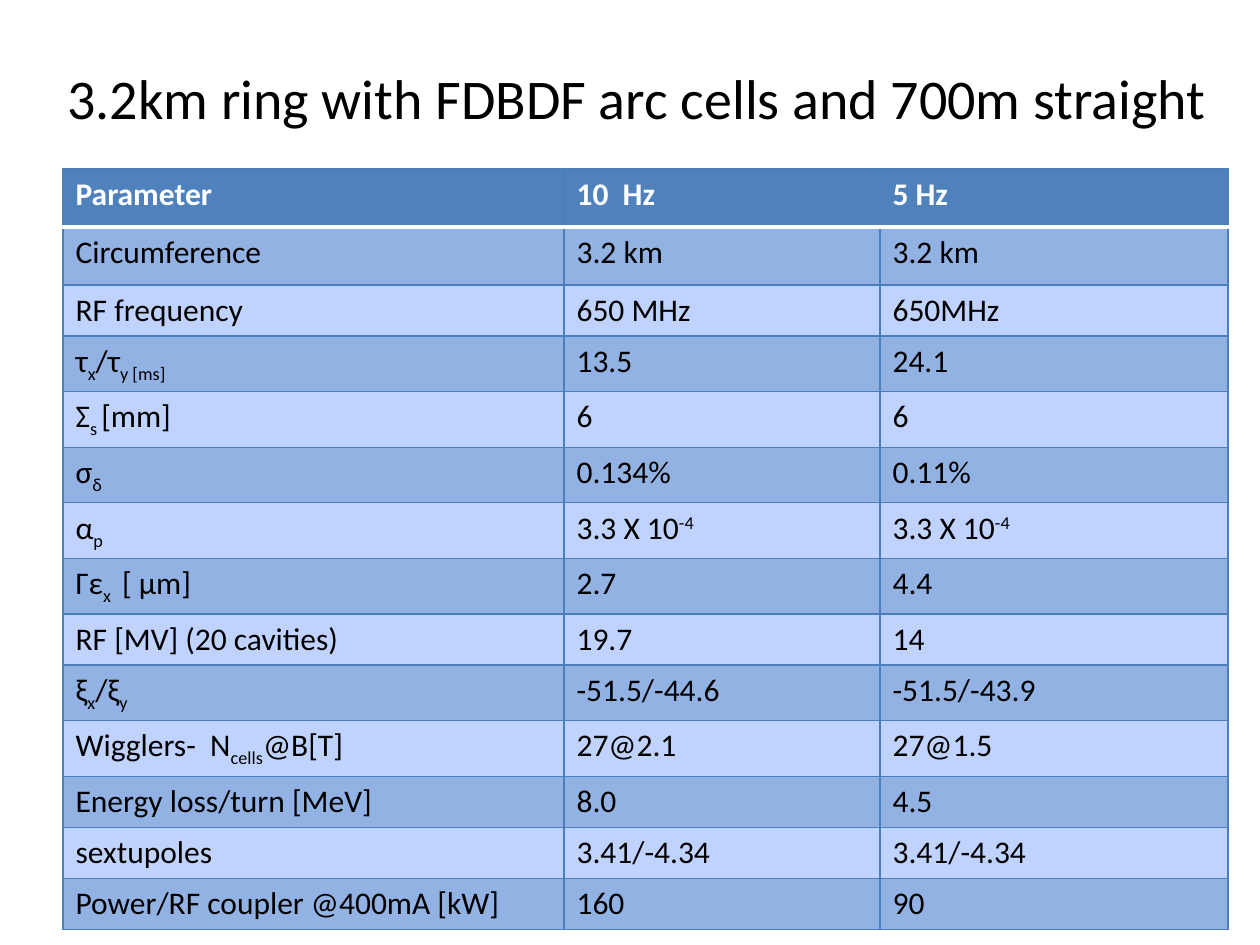
"""Build the slide of 3.2km ring parameters at 10 Hz and 5 Hz."""
from lxml import etree
from pptx import Presentation
from pptx import util as u
from pptx.dml.color import RGBColor
from pptx.enum import text as t
from pptx.oxml.ns import qn

PX = 914400 // 126
BLACK = RGBColor(0x00, 0x00, 0x00)
WHITE = RGBColor(0xFF, 0xFF, 0xFF)
HEADER = RGBColor(0x4F, 0x81, 0xBD)
BAND = RGBColor(0x93, 0xB2, 0xE4)
PALE = RGBColor(0xC0, 0xD3, 0xFF)
RULE = RGBColor(0x4B, 0x7E, 0xBC)

TITLE = " 3.2km ring with FDBDF arc cells and 700m straight"
SHIFTS = {"_": "-25000", "^": "30000"}
PARAMETERS = [
    ("Parameter", "10  Hz", "5 Hz"),
    ("Circumference", "3.2 km", "3.2 km"),
    ("RF frequency", "650 MHz", "650MHz"),
    ("τ|_x|/τ|_y [ms]", "13.5", "24.1"),
    ("Σ|_s |[mm]", "6", "6"),
    ("σ|_δ", "0.134%", "0.11%"),
    ("α|_p", "3.3 X 10|^-4", "3.3 X 10|^-4"),
    ("Γε|_x | [ μm]", "2.7", "4.4"),
    ("RF [MV] (20 cavities)", "19.7", "14"),
    ("ξ|_x|/ξ|_y", "-51.5/-44.6", "-51.5/-43.9"),
    ("Wigglers-  N|_cells|@B[T]", "27@2.1", "27@1.5"),
    ("Energy loss/turn [MeV]", "8.0", "4.5"),
    ("sextupoles", "3.41/-4.34", "3.41/-4.34"),
    ("Power/RF coupler @400mA [kW]", "160", "90"),
]
COLUMN_WIDTHS = [501, 316, 348]
TALL_ROWS, TALL, SHORT = 2, 58, 51


def px(*lengths):
    return [length * PX for length in lengths]


def write(frame, content, size=18, color=BLACK, bold=False, align=t.PP_ALIGN.LEFT):
    paragraph = frame.paragraphs[0]
    paragraph.alignment = align
    for piece in content.split("|"):
        shift = SHIFTS.get(piece[0])
        run = paragraph.add_run()
        run.text = piece[1:] if shift else piece
        run.font.name, run.font.size = "Calibri", u.Pt(size)
        run.font.bold, run.font.color.rgb = bold, color
        if shift:
            run._r.get_or_add_rPr().set("baseline", shift)


def add_border(cell, side, color, width):
    line = etree.SubElement(cell._tc.get_or_add_tcPr(), qn(f"a:ln{side}"), w=str(u.Pt(width)))
    fill = etree.SubElement(line, qn("a:solidFill"))
    etree.SubElement(fill, qn("a:srgbClr"), val=str(color))


def fill_cell(cell, content, row):
    header = row == 0
    for side in "LRTB":
        under_header = (row, side) in ((0, "B"), (1, "T"))
        add_border(cell, side, *((WHITE, 2) if under_header else (RULE, 0.75)))
    cell.fill.solid()
    cell.fill.fore_color.rgb = HEADER if header else BAND if row % 2 else PALE
    write(cell.text_frame, content, color=WHITE if header else BLACK, bold=header)


def main():
    deck = Presentation()
    deck.slide_width, deck.slide_height = px(1260, 945)
    slide = deck.slides.add_slide(deck.slide_layouts[6])

    title = slide.shapes.add_textbox(*px(34, 18, 1194, 158)).text_frame
    title.word_wrap = True
    title.vertical_anchor = t.MSO_ANCHOR.MIDDLE
    write(title, TITLE, size=32, align=t.PP_ALIGN.CENTER)

    heights = [TALL if row < TALL_ROWS else SHORT for row in range(len(PARAMETERS))]
    table = slide.shapes.add_table(
        len(PARAMETERS), len(COLUMN_WIDTHS), *px(63, 169, sum(COLUMN_WIDTHS), sum(heights))
    ).table
    for column, width in zip(table.columns, px(*COLUMN_WIDTHS)):
        column.width = width
    for row, height in enumerate(px(*heights)):
        table.rows[row].height = height
        for cell, content in zip(table.rows[row].cells, PARAMETERS[row]):
            fill_cell(cell, content, row)

    deck.save("out.pptx")


if __name__ == "__main__":
    main()
